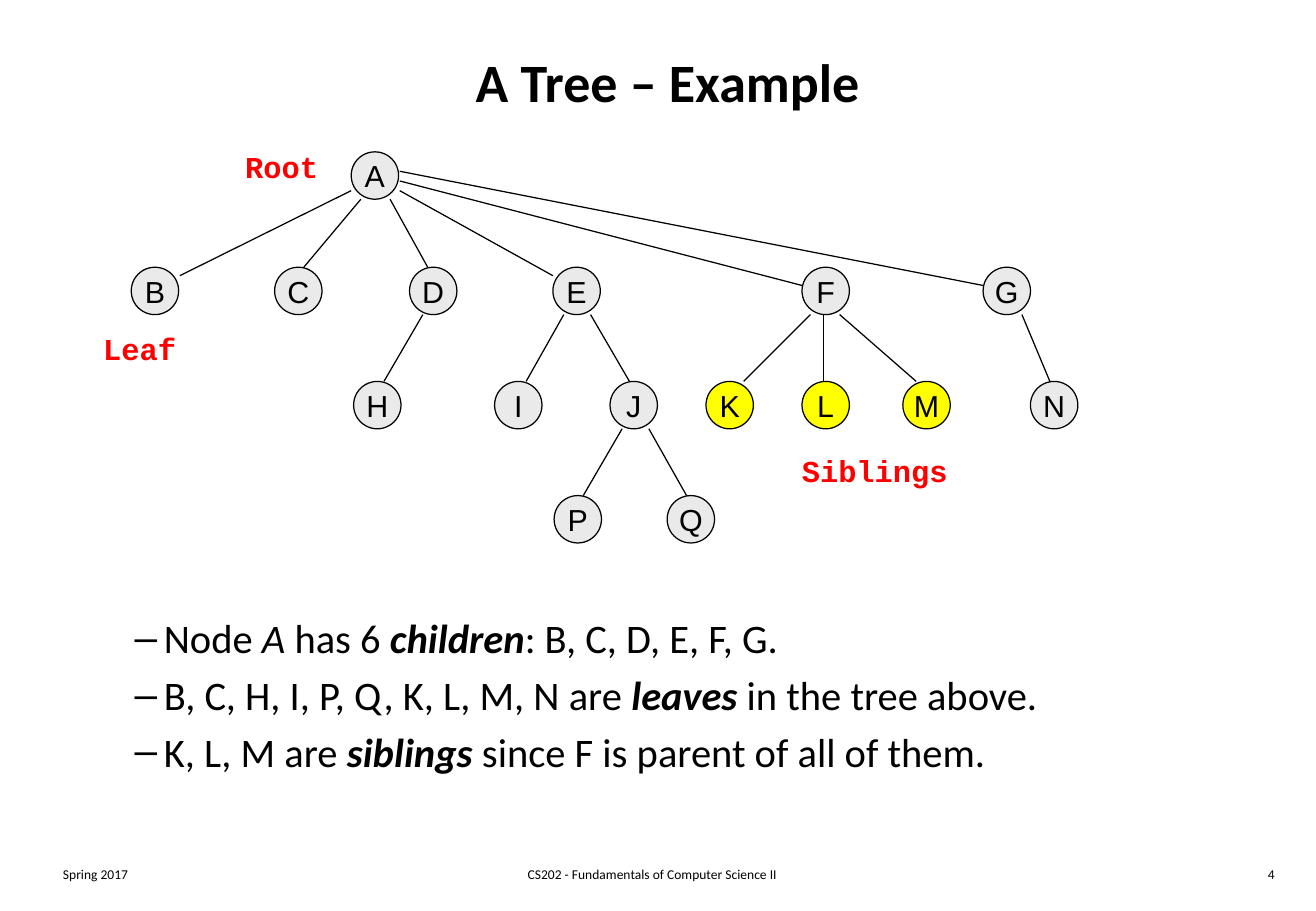
import pptx
import pptx.util
import pptx.dml.color
import pptx.enum.shapes
import pptx.enum.text
import pptx.oxml
import pptx.oxml.ns
from pptx.util import Inches

RGBColor = pptx.dml.color.RGBColor
ALIGN = pptx.enum.text.PP_ALIGN
ANCHOR = pptx.enum.text.MSO_ANCHOR

BLACK = RGBColor(0x00, 0x00, 0x00)
RED = RGBColor(0xFF, 0x00, 0x00)
GRAY = RGBColor(0xEA, 0xEA, 0xEA)
YELLOW = RGBColor(0xFF, 0xFF, 0x00)

# Content: text, left, top, width, height, alignment, size, bold, font, colour
TEXTS = [
    ("Spring 2017", 0.42, 7.08, 2.26, 0.25, ALIGN.LEFT, 8, False, "Calibri", BLACK),
    ("CS202 - Fundamentals of Computer Science II", 3.34, 7.08, 4.06, 0.25,
     ALIGN.CENTER, 8, False, "Calibri", BLACK),
    ("4", 8.33, 7.08, 2.26, 0.25, ALIGN.RIGHT, 8, False, "Calibri", BLACK),
    ("A Tree – Example ", 0.42, 0.17, 10.25, 1, ALIGN.CENTER, 32, True, "Calibri", BLACK),
    ("Root", 1.92, 1.17, 0.96, 0.4, ALIGN.LEFT, 18, True, "Courier New", RED),
    ("Leaf", 0.75, 2.67, 0.81, 0.4, ALIGN.LEFT, 18, True, "Courier New", RED),
    ("Siblings", 6.5, 3.67, 1.41, 0.4, ALIGN.LEFT, 18, True, "Courier New", RED),
]

# Tree levels: top of the row, then the left of each node
NODE_SIZE = 0.39
LEVELS = [
    (1.25, {"A": 2.89}),
    (2.2, {"B": 1.08, "C": 2.26, "D": 3.37, "E": 4.55, "F": 6.6, "G": 8.09}),
    (3.14, {"H": 2.91, "I": 4.07, "J": 5.02, "K": 5.81, "L": 6.6, "M": 7.43, "N": 8.48}),
    (4.08, {"P": 4.56, "Q": 5.49}),
]
SIBLINGS = "KLM"

# Branches: start x, y and end x, y
ROOT_EDGES = [
    (2.89, 1.57, 1.48, 2.27), (2.97, 1.64, 2.5, 2.2), (3.21, 1.64, 3.52, 2.2),
    (3.29, 1.57, 4.55, 2.27), (3.29, 1.49, 6.6, 2.35), (3.29, 1.41, 8.09, 2.35),
]
# Lower branches run from one row to the next: y range, then start x and end x
ROW_EDGES = [
    (2.59, 3.14, [(3.48, 3.16), (4.64, 4.33), (4.86, 5.18), (6.67, 6.12),
                  (6.78, 6.78), (6.91, 7.54), (8.41, 8.64)]),
    (3.53, 4.08, [(5.12, 4.8), (5.34, 5.65)]),
]

# Each bullet is a list of (text, bold, italic)
BULLETS = [
    [("Node ", False, False), ("A", False, True), (" has 6 ", False, False),
     ("children", True, True), (": B, C, D, E, F, G.", False, False)],
    [("B, C, H, I, P, Q, K, L, M, N are ", False, False), ("leaves", True, True),
     (" in the tree above.", False, False)],
    [("K, L, M are ", False, False), ("siblings", True, True),
     (" since F is parent of all of them.", False, False)],
]

prs = pptx.Presentation()
prs.slide_width, prs.slide_height = Inches(10.83), Inches(7.5)
s = prs.slides.add_slide(prs.slide_layouts[6])


def style(r, size, font, color, bold=False, italic=False):
    r.font.size = pptx.util.Pt(size)
    r.font.name = font
    r.font.color.rgb = color
    r.font.bold = bold
    r.font.italic = italic


def add_text_box(*box):
    tf = s.shapes.add_textbox(*map(Inches, box)).text_frame
    tf.word_wrap = True
    return tf


def add_node(letter, left, top):
    sp = s.shapes.add_shape(pptx.enum.shapes.MSO_SHAPE.OVAL, Inches(left), Inches(top),
                            Inches(NODE_SIZE), Inches(NODE_SIZE))
    sp.shadow.inherit = False
    sp.fill.solid()
    sp.fill.fore_color.rgb = YELLOW if letter in SIBLINGS else GRAY
    sp.line.color.rgb = BLACK
    sp.line.width = pptx.util.Pt(0.75)
    tf = sp.text_frame
    tf.word_wrap = False
    tf.vertical_anchor = ANCHOR.MIDDLE
    p = tf.paragraphs[0]
    p.text = letter
    p.alignment = ALIGN.CENTER
    style(p.runs[0], 18, "Arial", BLACK)


def add_edge(*ends):
    line = s.shapes.add_connector(pptx.enum.shapes.MSO_CONNECTOR.STRAIGHT, *map(Inches, ends))
    line.line.color.rgb = BLACK
    line.line.width = pptx.util.Pt(0.75)
    line._element.spPr.append(pptx.oxml.parse_xml(
        "<a:effectLst %s/>" % pptx.oxml.ns.nsdecls("a")))


# Title, footer and labels
for text, left, top, width, height, align, size, bold, font, color in TEXTS:
    tf = add_text_box(left, top, width, height)
    if height == 1:
        tf.vertical_anchor = ANCHOR.MIDDLE
    p = tf.paragraphs[0]
    p.text = text
    p.alignment = align
    style(p.runs[0], size, font, color, bold)

# Tree
for top, nodes in LEVELS:
    for letter, left in nodes.items():
        add_node(letter, left, top)
for ends in ROOT_EDGES:
    add_edge(*ends)
for y0, y1, branches in ROW_EDGES:
    for x0, x1 in branches:
        add_edge(x0, y0, x1, y1)

# Bullets
tf = add_text_box(0.75, 5, 8.08, 1.88)
for i, parts in enumerate(BULLETS):
    p = tf.add_paragraph() if i else tf.paragraphs[0]
    p.space_before = pptx.util.Pt(4.8)
    pPr = p._p.get_or_add_pPr()
    pPr.set("marL", str(Inches(0.5)))
    pPr.set("indent", str(Inches(-0.24)))
    for tag in ('buFont %s typeface="Arial"', 'buChar %s char="–"'):
        pPr.append(pptx.oxml.parse_xml("<a:" + tag % pptx.oxml.ns.nsdecls("a") + "/>"))
    for text, bold, italic in parts:
        r = p.add_run()
        r.text = text
        style(r, 24, "Calibri", BLACK, bold, italic)

prs.save("out.pptx")
